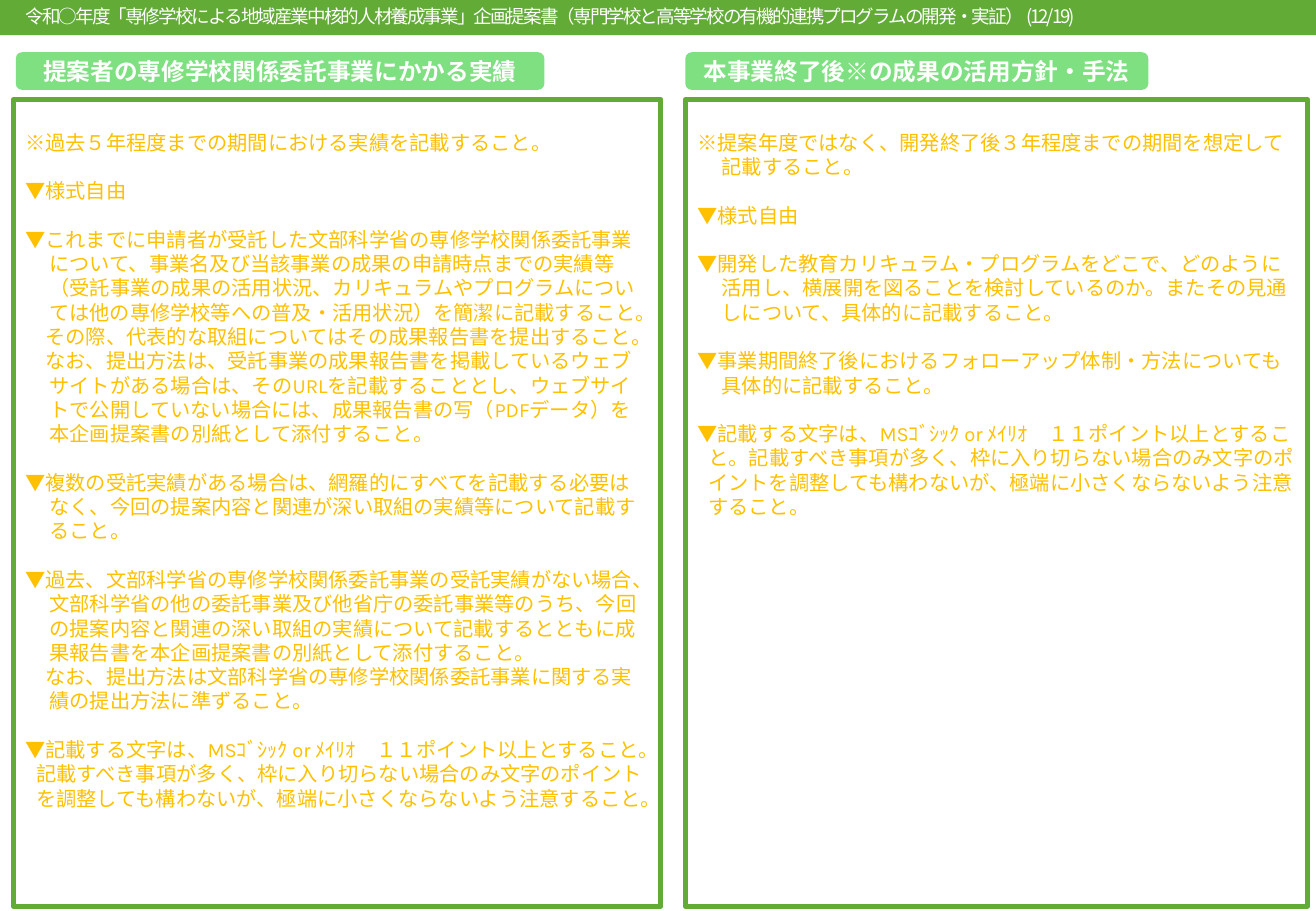
from lxml import etree
from pptx import Presentation
from pptx.dml.color import RGBColor
from pptx.enum.shapes import MSO_SHAPE
from pptx.enum.text import MSO_ANCHOR, PP_ALIGN
from pptx.oxml.ns import qn
from pptx.util import Inches, Pt

RECTANGLE = MSO_SHAPE.RECTANGLE
ROUNDED = MSO_SHAPE.ROUNDED_RECTANGLE
MIDDLE, TOP = MSO_ANCHOR.MIDDLE, MSO_ANCHOR.TOP
CENTER, LEFT = PP_ALIGN.CENTER, PP_ALIGN.LEFT

COLORS = {"frame": "62AB37", "heading": "7EE081", "note": "FFC000", "white": "FFFFFF"}
KARLA, NOTO = "Karla", "Noto Sans CJK JP"
LINE_HEIGHT = 14.4
NO_HANG, SMALL_HANG, HANG = 0, 0.09, 0.2

TITLE = "令和○年度「専修学校による地域産業中核的人材養成事業」企画提案書（専門学校と高等学校の有機的連携プログラムの開発・実証） (12/19)"

FORMAT_NOTE = (True, NO_HANG, [("▼様式自由", KARLA)])
FONT_NOTE = (True, SMALL_HANG, [
    ("▼記載する文字は、MSｺﾞｼｯｸ or ﾒｲﾘｵ　１１ポイント以上とすること。", KARLA),
    ("記載すべき事項", NOTO),
    ("が多く、枠に入り切らない場合のみ文字のポイントを調整しても構わないが、極端に小さくならないよう注意すること。", KARLA),
])

PANELS = [
    {
        "heading": "提案者の専修学校関係委託事業にかかる実績",
        "heading_left": 0.13, "heading_width": 4.35,
        "left": 0.11, "width": 5.33,
        "notes": [
            (False, NO_HANG, [("※過去５年程度までの期間における実績を記載すること。", KARLA)]),
            FORMAT_NOTE,
            (True, HANG, [("▼これまでに申請者が受託した文部科学省の専修学校関係委託事業について、事業名及び当該事業の成果の申請時点までの実績等（受託事業の成果の活用状況、カリキュラムやプログラムについては他の専修学校等への普及・活用状況）を簡潔に記載すること。", KARLA)]),
            (False, HANG, [("　その際、代表的な取組についてはその成果報告書を提出すること。", KARLA)]),
            (False, HANG, [("　なお、提出方法は、受託事業の成果報告書を掲載しているウェブサイトがある場合は、そのURLを記載することとし、ウェブサイトで公開していない場合には、成果報告書の写（PDFデータ）を本企画提案書の別紙として添付すること。", KARLA)]),
            (True, HANG, [("▼複数の受託実績がある場合は、網羅的にすべてを記載する必要はなく、今回の提案内容と関連が深い取組の実績等について記載すること。", KARLA)]),
            (True, HANG, [("▼過去、文部科学省の専修学校関係委託事業の受託実績がない場合、文部科学省の他の委託事業及び他省庁の委託事業等のうち、今回の提案内容と関連の深い取組の実績について記載するとともに成果報告書を本企画提案書の別紙として添付すること。", KARLA)]),
            (False, HANG, [("　なお、提出方法は文部科学省の専修学校関係委託事業に関する実績の提出方法に準ずること。", KARLA)]),
            FONT_NOTE,
        ],
    },
    {
        "heading": "本事業終了後※の成果の活用方針・手法",
        "heading_left": 5.64, "heading_width": 3.81,
        "left": 5.64, "width": 5.12,
        "notes": [
            (False, HANG, [("※提案年度ではなく、開発終了後３年程度までの期間を想定して記載すること。", KARLA)]),
            FORMAT_NOTE,
            (True, HANG, [("▼開発した教育カリキュラム・プログラムをどこで、どのように活用し、横展開を図ることを検討しているのか。またその見通しについて、具体的に記載すること。", KARLA)]),
            (True, HANG, [("▼事業期間終了後におけるフォローアップ体制・方法についても具体的に記載すること。", KARLA)]),
            FONT_NOTE,
        ],
    },
]


def add_box(page, kind, left, top, width, height, fill=None, line=None):
    box = page.shapes.add_shape(kind, Inches(left), Inches(top), Inches(width), Inches(height))
    box.shadow.inherit = False
    if fill:
        box.fill.solid()
        box.fill.fore_color.rgb = RGBColor.from_string(COLORS[fill])
    else:
        box.fill.background()
    if line:
        box.line.color.rgb = RGBColor.from_string(COLORS[line])
        box.line.width = Pt(3)
    else:
        box.line.fill.background()
    return box


def set_frame(box, anchor, top_inset):
    frame = box.text_frame
    frame.word_wrap = True
    frame.vertical_anchor = anchor
    frame.margin_top = Inches(top_inset)
    frame.margin_bottom = 0
    return frame


def add_span(para, text, font, size, color, bold=False):
    span = para.add_run()
    span.text = text
    span.font.size = Pt(size)
    span.font.bold = bold
    span.font.name = font
    span.font.color.rgb = RGBColor.from_string(COLORS[color])
    properties = span.font._element
    etree.SubElement(properties, qn("a:ea")).set("typeface", font)
    return properties


def add_heading(page, panel):
    box = add_box(page, ROUNDED, panel["heading_left"], 0.43, panel["heading_width"], 0.31, fill="heading")
    para = set_frame(box, MIDDLE, 0).paragraphs[0]
    para.alignment = CENTER
    add_span(para, panel["heading"], KARLA, 14, "white", True)


def add_notes(page, panel):
    box = add_box(page, RECTANGLE, panel["left"], 0.82, panel["width"], 6.64, line="frame")
    frame = set_frame(box, TOP, 0.25)
    for index, (gap, hang, spans) in enumerate(panel["notes"]):
        para = frame.add_paragraph() if index else frame.paragraphs[0]
        para.alignment = LEFT
        para.line_spacing = Pt(LINE_HEIGHT)
        para.space_before = Pt(LINE_HEIGHT if gap else 0)
        indents = para._p.get_or_add_pPr()
        indents.set("marL", str(Inches(hang)))
        indents.set("indent", str(-Inches(hang)))
        for text, font in spans:
            add_span(para, text, font, 12, "note")


def add_title(page):
    add_box(page, RECTANGLE, 0, 0, 10.83, 0.29, fill="frame")
    box = page.shapes.add_textbox(0, 0, Inches(9.06), Inches(0.27))
    para = set_frame(box, MIDDLE, 0).paragraphs[0]
    para.alignment = CENTER
    add_span(para, TITLE, NOTO, 11, "white").set("spc", "-120")


def main():
    deck = Presentation()
    deck.slide_width, deck.slide_height = Inches(10.83), Inches(7.5)
    page = deck.slides.add_slide(deck.slide_layouts[6])
    for panel in PANELS:
        add_heading(page, panel)
        add_notes(page, panel)
    add_title(page)
    deck.save("out.pptx")


if __name__ == "__main__":
    main()
